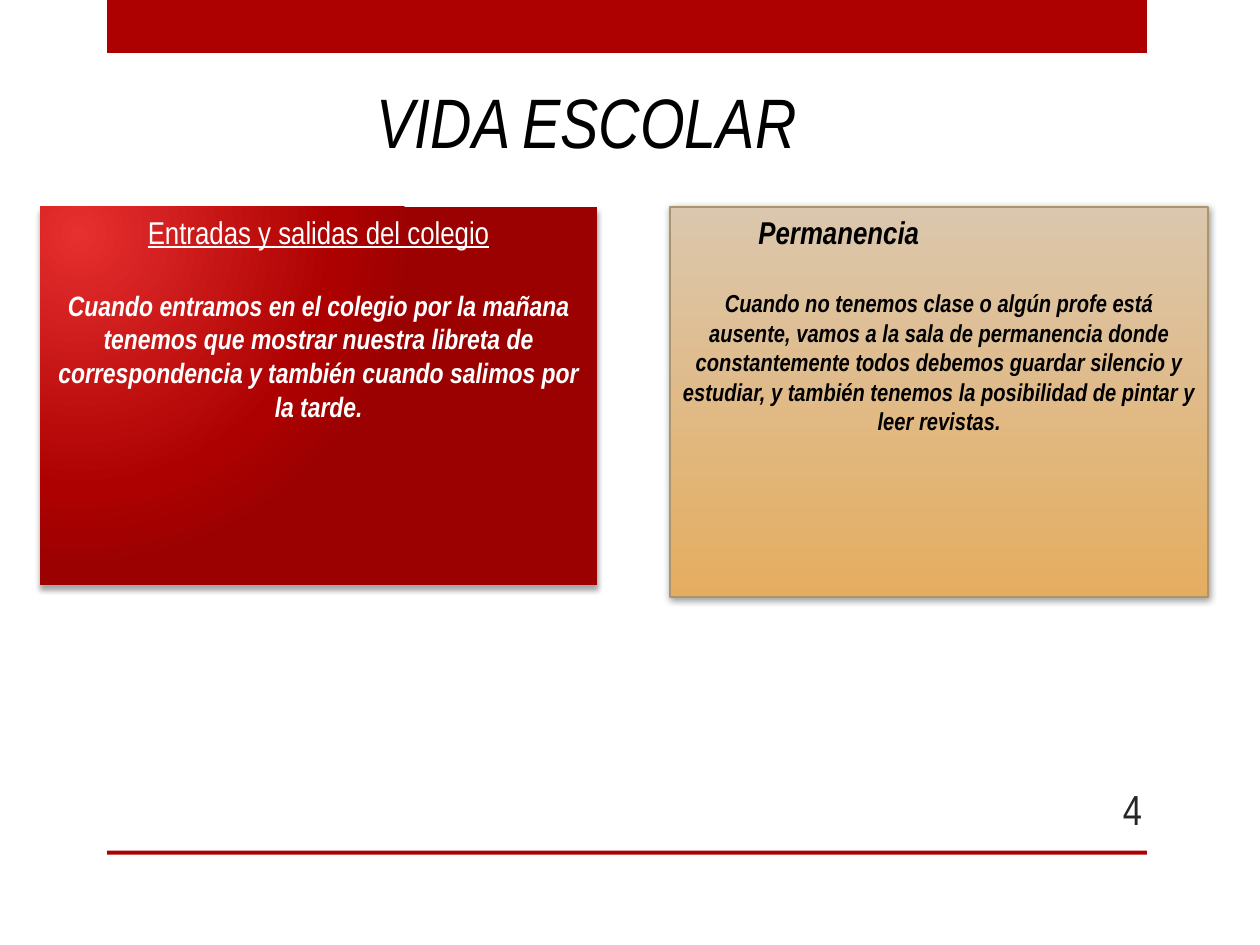
"""Build the school life slide with two text panels."""
from lxml import etree
from pptx import Presentation
from pptx import util as u
from pptx.dml.color import RGBColor
from pptx.enum import shapes, text
from pptx.oxml import ns

ALIGN = text.PP_ALIGN
RED = "AD0101"


def colour(value):
    """Turn a hex string into a colour."""
    return RGBColor.from_string(value)


def child(parent, tag, **values):
    """Add a drawing element with attributes."""
    return etree.SubElement(parent, ns.qn("a:" + tag), {key: str(value) for key, value in values.items()})


def shade(parent, value, alpha=100):
    """Add a colour element with an opacity in percent."""
    child(child(parent, "srgbClr", val=value), "alpha", val=alpha * 1000)


class SlideBuilder:
    """Hold the style and the current slide."""

    font = "Arial Narrow"

    def __init__(self, deck):
        """Add a title-only page to the deck."""
        self.page = deck.slides.add_slide(deck.slide_layouts[5])

    def add_words(self, para, wording, ink, align=ALIGN.CENTER, **formats):
        """Fill a paragraph with one formatted span."""
        para.alignment = align
        span = para.add_run()
        span.text = wording
        span.font.color.rgb = colour(ink)
        for name, value in {"name": self.font, **formats}.items():
            setattr(span.font, name, value)

    def title(self, wording, place):
        """Move the title placeholder and fill it."""
        box = self.page.shapes.title
        box.left, box.top, box.width, box.height = map(u.Cm, place)
        frame = box.text_frame
        frame.vertical_anchor = text.MSO_ANCHOR.TOP
        frame.auto_size = text.MSO_AUTO_SIZE.SHAPE_TO_FIT_TEXT
        self.add_words(frame.paragraphs[0], wording, "000000", size=u.Pt(40), italic=True)

    def number(self, wording, place):
        """Add the page number."""
        frame = self.page.shapes.add_textbox(*map(u.Cm, place)).text_frame
        frame.word_wrap = True
        frame.vertical_anchor = text.MSO_ANCHOR.MIDDLE
        self.add_words(frame.paragraphs[0], wording, "262626", ALIGN.RIGHT, size=u.Pt(24))

    def rectangle(self, place):
        """Add a rectangle without line or shadow."""
        box = self.page.shapes.add_shape(shapes.MSO_SHAPE.RECTANGLE, *map(u.Cm, place))
        box.shadow.inherit = False
        box.line.fill.background()
        return box

    def band(self, place):
        """Add a plain red band."""
        fill = self.rectangle(place).fill
        fill.solid()
        fill.fore_color.rgb = colour(RED)

    def gradient(self, box, stops, centre):
        """Fill a box with a radial or a downward gradient."""
        box.fill.gradient()
        grade = box._element.spPr.find(ns.qn("a:gradFill"))
        for part in list(grade):
            grade.remove(part)
        listing = child(grade, "gsLst")
        for position, value in stops:
            shade(child(listing, "gs", pos=position * 1000), value)
        if centre:
            circle = child(grade, "path", path="circle")
            child(circle, "fillToRect", **{side: share * 1000 for side, share in zip("ltrb", centre)})
        else:
            child(grade, "lin", ang=5400000, scaled=0)

    def shadow(self, box, alpha, blur, distance, angle):
        """Give a box a soft black shadow."""
        effects = box._element.spPr.find(ns.qn("a:effectLst"))
        outer = child(effects, "outerShdw", blurRad=u.Pt(blur), dist=u.Pt(distance),
                      dir=angle * 60000, rotWithShape=0)
        shade(outer, "000000", alpha)

    def panel(self, place, stops, shadow, heading, body, ink, head_style, size,
              centre=None, border=None, indent=None):
        """Add a gradient panel with a heading and a text."""
        box = self.rectangle(place)
        self.gradient(box, stops, centre)
        self.shadow(box, *shadow)
        if border:
            box.line.color.rgb = colour(border)
            box.line.width = u.Pt(1.25)
        frame = box.text_frame
        frame.word_wrap = True
        frame.vertical_anchor = text.MSO_ANCHOR.TOP
        para = frame.paragraphs[0]
        if indent:
            para._p.get_or_add_pPr().set("marL", str(u.Cm(indent)))
        self.add_words(para, heading, ink, ALIGN.LEFT if indent else ALIGN.CENTER,
                       size=u.Pt(18), **head_style)
        para = frame.add_paragraph()
        para.space_before = u.Pt(21.5)
        self.add_words(para, body, ink, size=u.Pt(size), bold=True, italic=True)


def main():
    """Build and save the deck."""
    deck = Presentation()
    deck.slide_width, deck.slide_height = u.Cm(25.4), u.Cm(19.05)
    slide = SlideBuilder(deck)
    for top, height in ((0, 1.07), (17.15, 0.08)):
        slide.band((2.16, top, 20.96, height))
    slide.number("4", (21.16, 15.8, 2.11, 1.02))
    slide.title("VIDA ESCOLAR", (2.39, 1.45, 18.87, 1.96))
    slide.panel(
        (0.81, 4.17, 11.23, 7.62), ((0, "E62F2F"), (76, RED), (100, "9C0101")), (35, 3, 3, 90),
        "Entradas y salidas del colegio",
        "Cuando entramos en el colegio por la mañana tenemos que mostrar nuestra libreta de "
        "correspondencia y también cuando salimos por la tarde.",
        "FFFFFF", {"underline": True}, 16, centre=(15, 15, 100, 100))
    slide.panel(
        (13.51, 4.17, 10.85, 7.87), ((0, "DBC7AD"), (100, "E5AD60")), (40, 4, 1, 88),
        "Permanencia",
        "Cuando no tenemos clase o algún profe está ausente, vamos a la sala de permanencia donde "
        "constantemente todos debemos guardar silencio y estudiar, y también tenemos la posibilidad "
        "de pintar y leer revistas.",
        "000000", {"bold": True, "italic": True}, 14, border="AC956E", indent=1.53)
    deck.save("out.pptx")


if __name__ == "__main__":
    main()
